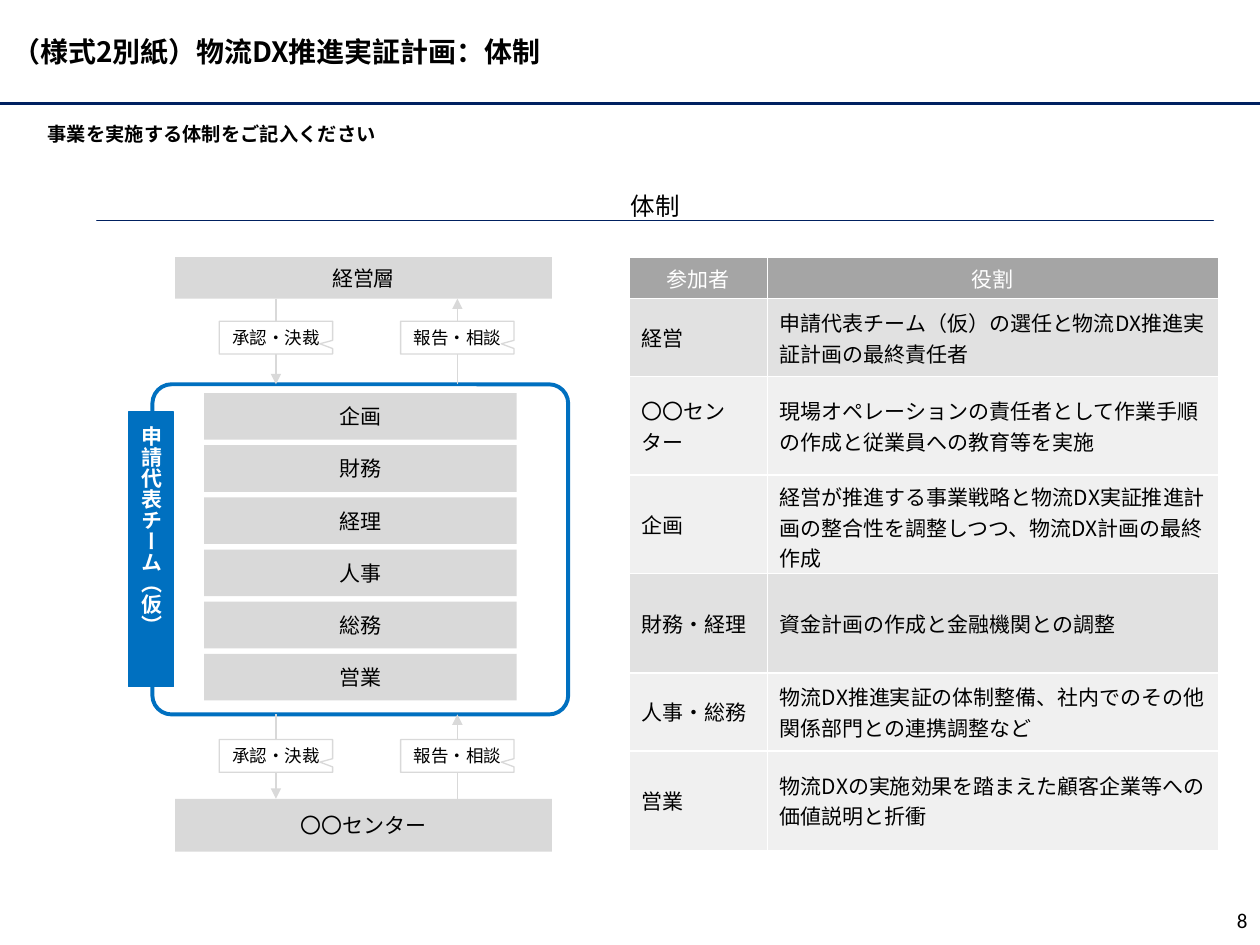
from lxml.etree import SubElement
from pptx import Presentation
from pptx.dml.color import RGBColor
from pptx.enum.shapes import MSO_CONNECTOR, MSO_SHAPE
from pptx.enum.text import MSO_ANCHOR, PP_ALIGN
from pptx.oxml.ns import qn
from pptx.util import Inches, Pt

# Content
TITLE = "（様式2別紙）物流DX推進実証計画：体制"
LEAD = "事業を実施する体制をご記入ください"
HEADING = "体制"
TEAM = "申請代表チーム（仮）"
PAGE_NUMBER = "8"
DEPARTMENTS = ["企画", "財務", "経理", "人事", "総務", "営業"]
OUTER_BOXES = [("経営層", 2.04, 0.33), ("〇〇センター", 6.34, 0.42)]
FLOWS = [("承認・決裁", 2.19, True), ("報告・相談", 3.63, False)]
FLOW_BANDS = [(2.37, 3.05, 2.55), (5.67, 6.34, 5.87)]  # top, bottom, label top
# participant, role, row height, fill
ROLES = [
    ("参加者", "役割", 0.33, "header"),
    ("経営", "申請代表チーム（仮）の選任と物流DX推進実証計画の最終責任者", 0.62, "dark_row"),
    ("〇〇センター", "現場オペレーションの責任者として作業手順の作成と従業員への教育等を実施",
     0.78, "light_row"),
    ("企画", "経営が推進する事業戦略と物流DX実証推進計画の整合性を調整しつつ、物流DX計画の最終作成",
     0.78, "light_row"),
    ("財務・経理", "資金計画の作成と金融機関との調整", 0.79, "dark_row"),
    ("人事・総務", "物流DX推進実証の体制整備、社内でのその他関係部門との連携調整など",
     0.62, "light_row"),
    ("営業", "物流DXの実施効果を踏まえた顧客企業等への価値説明と折衝", 0.79, "light_row"),
]
COLUMN_WIDTHS = [1.1, 3.58]

COLORS = {
    "text": "000000", "white": "FFFFFF", "navy": "002060", "blue": "0070C0",
    "gray": "D9D9D9", "lavender": "D6D6E8", "header": "A5A5A5",
    "dark_row": "E1E1E1", "light_row": "F0F0F0",
}
FONT = "Noto Sans CJK JP"

deck = Presentation()
deck.slide_width, deck.slide_height = Inches(10), Inches(7.5)
page = deck.slides.add_slide(deck.slide_layouts[6])


def color(name):
    return RGBColor.from_string(COLORS[name])


def write(frame, text, size, ink="text", bold=False, align=PP_ALIGN.LEFT, font=FONT):
    frame.text = text
    para = frame.paragraphs[0]
    para.alignment = align
    span = para.runs[0]
    span.font.size, span.font.bold, span.font.name = Pt(size), bold, font
    span.font.color.rgb = color(ink)
    SubElement(span.font._element, qn("a:ea")).set("typeface", font)
    return para


def add_text(text, area, size, anchor=MSO_ANCHOR.TOP, **style):
    frame = page.shapes.add_textbox(*map(Inches, area)).text_frame
    frame.word_wrap = True
    frame.vertical_anchor = anchor
    write(frame, text, size, **style)


def add_box(area, fill=None, line=None, weight=0.75, kind=MSO_SHAPE.RECTANGLE,
            text=None, size=12, align=PP_ALIGN.CENTER, **style):
    box = page.shapes.add_shape(kind, *map(Inches, area))
    box.shadow.inherit = False
    if fill:
        box.fill.solid()
        box.fill.fore_color.rgb = color(fill)
    else:
        box.fill.background()
    if line:
        box.line.color.rgb = color(line)
        box.line.width = Pt(weight)
    else:
        box.line.fill.background()
    if text:
        frame = box.text_frame
        frame.margin_left = frame.margin_right = Inches(0.04)
        frame.margin_top = frame.margin_bottom = Inches(0.04)
        frame.vertical_anchor = MSO_ANCHOR.MIDDLE
        write(frame, text, size, align=align, **style)
    return box


def add_line(start, end, ink, weight, arrow=False):
    line = page.shapes.add_connector(MSO_CONNECTOR.STRAIGHT, *map(Inches, start + end))
    line.line.color.rgb = color(ink)
    line.line.width = Pt(weight)
    if arrow:
        SubElement(line.line._get_or_add_ln(), qn("a:tailEnd")).set("type", "triangle")
    SubElement(line._element.spPr, qn("a:effectLst"))


# Title, lead and page number
add_line((0, 0.82), (10, 0.82), "navy", 1.5)
add_text(TITLE, (0, 0, 10, 0.82), 16, MSO_ANCHOR.MIDDLE, bold=True)
add_text(LEAD, (0.28, 0.92, 9.46, 0.29), 11, bold=True)
add_text(PAGE_NUMBER, (7.75, 7.1, 2.25, 0.4), 12, MSO_ANCHOR.MIDDLE,
         align=PP_ALIGN.RIGHT, font="Calibri")

# Section heading standing on its rule
heading = add_box((0.77, 1.75, 8.86, 0), "lavender", "navy", text=HEADING, size=14)
heading.text_frame.vertical_anchor = MSO_ANCHOR.BOTTOM
heading.text_frame.paragraphs[0].line_spacing = 1.3

# Organisation boxes
for name, top, height in OUTER_BOXES:
    add_box((1.39, top, 2.99, height), "gray", text=name)
frame_box = add_box((1.21, 3.05, 3.3, 2.62), line="blue", weight=2.25,
                    kind=MSO_SHAPE.ROUNDED_RECTANGLE)
frame_box.adjustments[0] = 0.058
team = add_box((1.02, 3.27, 0.36, 2.18), "blue", "blue", text=TEAM,
               align=PP_ALIGN.LEFT, ink="white", bold=True)
team.text_frame.margin_top = Inches(0.11)
team.text_frame._txBody.bodyPr.set("vert", "eaVert")
for index, name in enumerate(DEPARTMENTS):
    add_box((1.62, 3.12 + index * 0.414, 2.48, 0.37), "gray", text=name)

# Approval and reporting flows
for top, bottom, label_top in FLOW_BANDS:
    for name, x, downward in FLOWS:
        start, end = (top, bottom) if downward else (bottom, top)
        add_line((x, start), (x, end), "gray", 0.75, arrow=True)
        label = add_box((x - 0.45, label_top, 0.9, 0.26), "white", "gray",
                        kind=MSO_SHAPE.RECTANGULAR_CALLOUT, text=name, size=10)
        label.adjustments[0], label.adjustments[1] = 0.388, 0.188

# Role table
heights = [role[2] for role in ROLES]
table = page.shapes.add_table(
    len(ROLES), len(COLUMN_WIDTHS), Inches(4.99), Inches(2.04),
    Inches(sum(COLUMN_WIDTHS)), Inches(sum(heights))).table
table.horz_banding = False
for column, width in zip(table.columns, COLUMN_WIDTHS):
    column.width = Inches(width)
for row, (participant, role, height, fill) in zip(table.rows, ROLES):
    row.height = Inches(height)
    is_header = fill == "header"
    for cell, text in zip(row.cells, (participant, role)):
        cell.fill.solid()
        cell.fill.fore_color.rgb = color(fill)
        cell.vertical_anchor = MSO_ANCHOR.MIDDLE
        write(cell.text_frame, text, 12, ink="white" if is_header else "text",
              align=PP_ALIGN.CENTER if is_header else PP_ALIGN.LEFT)

deck.save("out.pptx")
